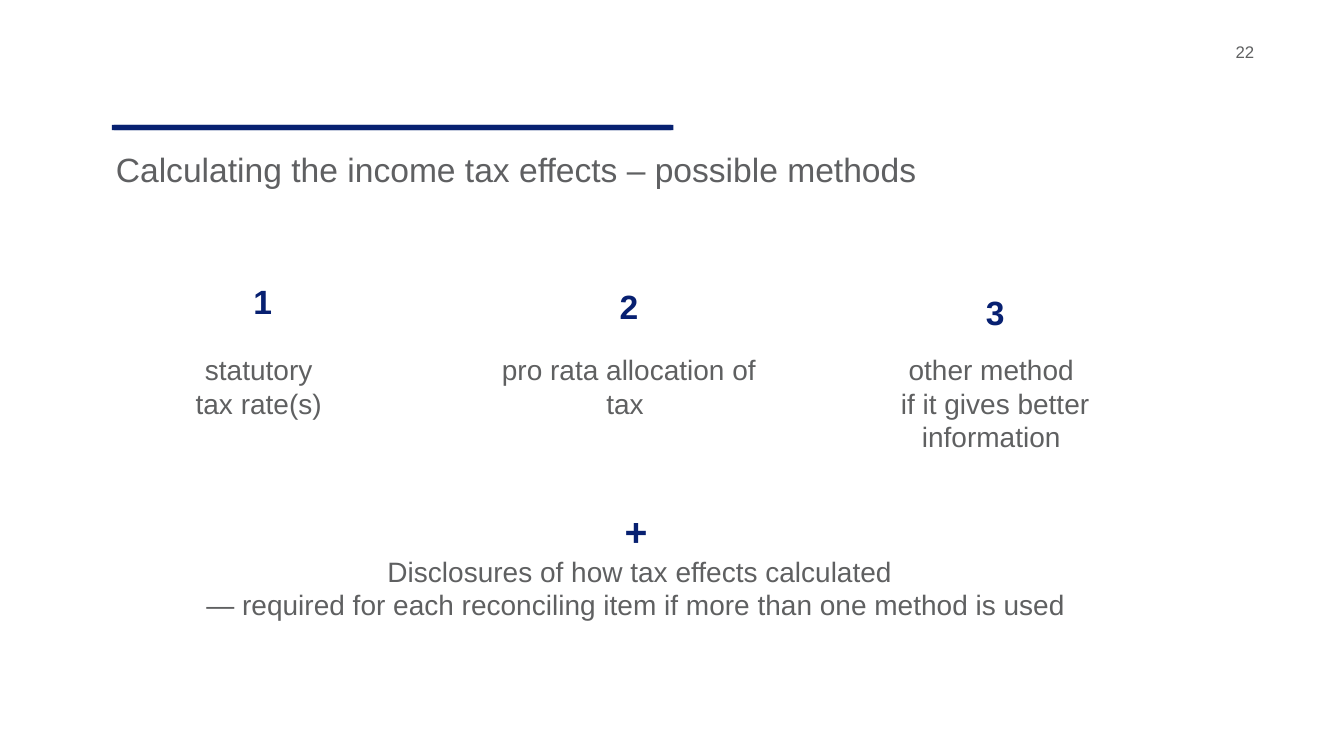
from dataclasses import dataclass

from pptx import Presentation
from pptx import util as u
from pptx.dml.color import RGBColor
from pptx.enum import shapes, text


@dataclass(frozen=True)
class Theme:
    font: str = "Arial"
    bar: str = "072171"
    accent: str = "072071"
    title: str = "5F6062"
    body: str = "5F6061"
    white: str = "FFFFFF"
    plus_size: int = 28
    heading_size: int = 24
    body_size: int = 20
    page_size: int = 12


class SlideBuilder:
    def __init__(self, slide, theme):
        self.slide = slide
        self.theme = theme

    def rectangle(self, left, top, width, height, color, outlined=False):
        shape = self.slide.shapes.add_shape(
            shapes.MSO_SHAPE.RECTANGLE,
            u.Cm(left), u.Cm(top), u.Cm(width), u.Cm(height))
        shape.shadow.inherit = False
        shape.fill.solid()
        shape.fill.fore_color.rgb = RGBColor.from_string(color)
        if outlined:
            shape.line.color.rgb = RGBColor.from_string(color)
            shape.line.width = u.Pt(0.75)
        else:
            shape.line.fill.background()
        return shape

    def text_box(self, left, top, width, height, inset=True):
        shape = self.slide.shapes.add_textbox(
            u.Cm(left), u.Cm(top), u.Cm(width), u.Cm(height))
        if not inset:
            frame = shape.text_frame
            frame.margin_left = frame.margin_right = 0
            frame.margin_top = frame.margin_bottom = 0
        return shape

    def style_font(self, font, size, color, bold=False):
        font.name = self.theme.font
        font.size = u.Pt(size)
        font.bold = bold
        font.color.rgb = RGBColor.from_string(color)

    def set_lines(self, shape, lines, size, color, bold=False, centered=True):
        frame = shape.text_frame
        frame.word_wrap = True
        frame.vertical_anchor = text.MSO_ANCHOR.TOP
        frame.text = "\n".join(lines)
        for paragraph in frame.paragraphs:
            paragraph.alignment = (
                text.PP_ALIGN.CENTER if centered else text.PP_ALIGN.LEFT)
            self.style_font(paragraph.font, size, color, bold)


def main():
    theme = Theme()
    presentation = Presentation()
    presentation.slide_width = u.Cm(33.87)
    presentation.slide_height = u.Cm(19.05)
    slide = presentation.slides.add_slide(presentation.slide_layouts[6])
    builder = SlideBuilder(slide, theme)

    # Header bar, title and page number
    for left in (2.82, 2.87):
        builder.rectangle(left, 3.15, 14.1, 0.13, theme.bar)
    title = builder.text_box(2.92, 3.76, 29.92, 2.08, inset=False)
    builder.set_lines(title, ["Calculating the income tax effects – possible methods"],
                      theme.heading_size, theme.title, centered=False)
    page = builder.text_box(31.14, 1.04, 1.7, 0.74, inset=False)
    builder.set_lines(page, ["22"], theme.page_size, theme.body, centered=False)

    # Three methods, evenly spaced, each with its number above
    methods = [
        (7.16, 1.96, ["statutory ", "tax rate(s) "]),
        (7.26, 1.96, ["pro rata allocation of tax "]),
        (7.54, 2.82, ["other method ", "if it gives better information "]),
    ]
    for index, (width, height, lines) in enumerate(methods):
        center = 6.62 + 9.23 * index
        method = builder.rectangle(center - width / 2, 8.76, width, height,
                                   theme.white, outlined=True)
        builder.set_lines(method, lines, theme.body_size, theme.body)
        number = builder.text_box(center - 0.55, 6.96 + 0.13 * index, 1.1, 1.27)
        builder.set_lines(number, [str(index + 1)], theme.heading_size,
                          theme.accent, bold=True)

    # Disclosure requirement, led by a large plus sign
    disclosure = builder.text_box(3.4, 12.65, 25.45, 3.18)
    builder.set_lines(disclosure, [
        "+",
        "Disclosures of how tax effects calculated",
        "— required for each reconciling item if more than one method is used ",
    ], theme.body_size, theme.body)
    plus_line = disclosure.text_frame.paragraphs[0]
    builder.style_font(plus_line.runs[0].font, theme.plus_size, theme.accent, bold=True)
    space = plus_line.add_run()
    space.text = " "
    builder.style_font(space.font, theme.body_size, theme.body)

    presentation.save("out.pptx")


if __name__ == "__main__":
    main()
